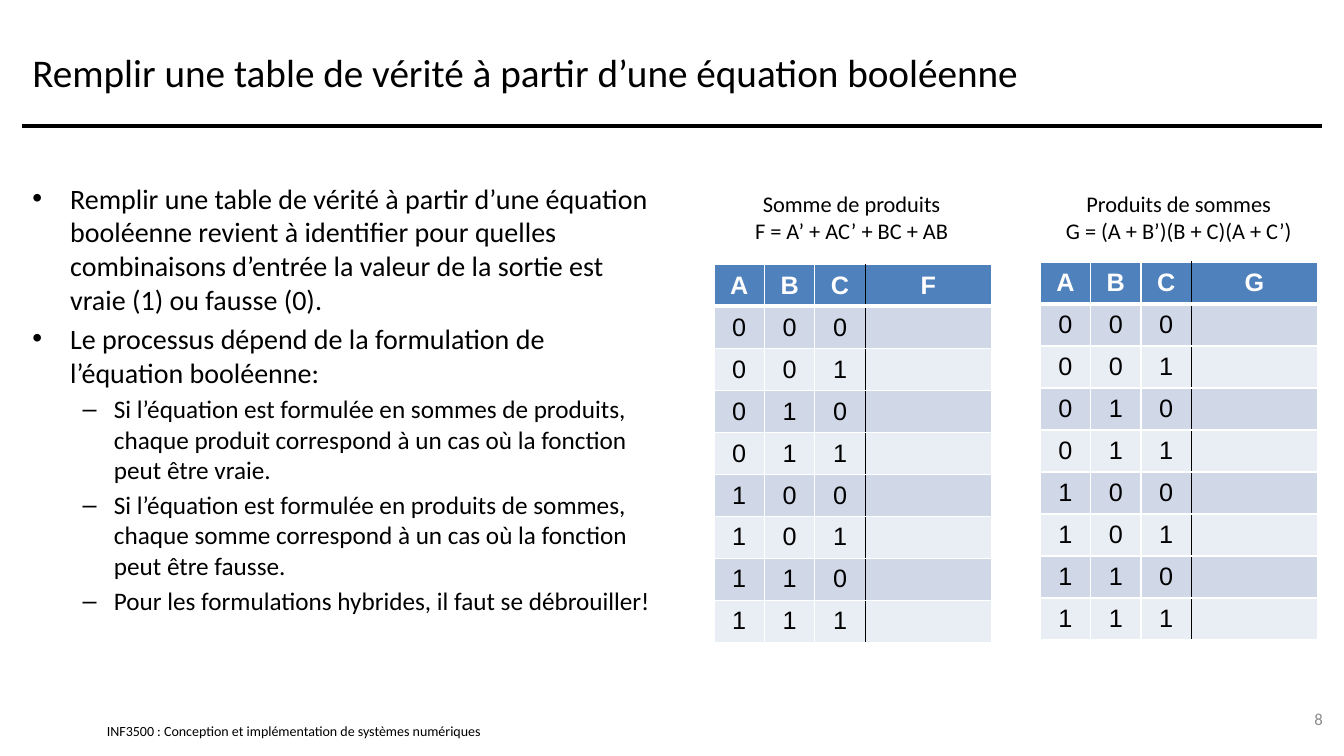
from itertools import product

from lxml import etree
from pptx import Presentation
from pptx import util as u
from pptx.dml.color import RGBColor
from pptx.enum import shapes, text
from pptx.oxml.ns import qn

THEME = {
    "font": "Calibri", "table_font": "Arial",
    "ink": "000000", "paper": "FFFFFF", "muted": "8C8C8C",
    "header": "4F81BD", "bands": ("D0D8E8", "E9EDF4"),
    "title": 28, "body": 20, "detail": 18, "caption": 16, "number": 12, "footer": 10,
}
CENTER, RIGHT = text.PP_ALIGN.CENTER, text.PP_ALIGN.RIGHT
MIDDLE = text.MSO_ANCHOR.MIDDLE

deck = Presentation()
deck.slide_width, deck.slide_height = u.Inches(13.333), u.Inches(7.5)
page = deck.slides.add_slide(deck.slide_layouts[6])

# Grid of 480 columns by 270 rows; one step is the same length both ways
STEP = deck.slide_height / 270


def style(paragraph, size, color="ink", font="font", bold=False):
    for span in paragraph.runs:
        span.font.name, span.font.size, span.font.bold = THEME[font], u.Pt(size), bold
        span.font.color.rgb = RGBColor.from_string(THEME[color])


def add_text(area, lines, size, color="ink", align=None, anchor=None):
    box = page.shapes.add_textbox(*(round(n * STEP) for n in area))
    frame = box.text_frame
    frame.word_wrap = True
    frame.text = "\n".join(lines)
    frame.vertical_anchor = anchor
    for para in frame.paragraphs:
        para.alignment = align
        style(para, size, color)
    return frame


# Footer and slide number
footer = add_text((38.2, 258, 184, 6),
                  ["INF3500 : Conception et implémentation de systèmes numériques"],
                  THEME["footer"], anchor=MIDDLE)
footer.margin_left = footer.margin_right = footer.margin_top = footer.margin_bottom = 0
add_text((452, 249.5, 24, 14.4), ["8"], THEME["number"], "muted", RIGHT, MIDDLE)

# Title and rule
add_text((8, 6, 464, 39), ["Remplir une table de vérité à partir d’une équation booléenne"],
         THEME["title"], anchor=MIDDLE)
rule = page.shapes.add_connector(shapes.MSO_CONNECTOR.STRAIGHT,
                                 *(round(n * STEP) for n in (8, 45, 472, 45)))
rule.line.width = u.Pt(3)
rule.line.color.rgb = RGBColor.from_string(THEME["ink"])
etree.SubElement(rule._element.spPr, qn("a:effectLst"))

# Explanation: (level, wording)
points = [
    (0, "Remplir une table de vérité à partir d’une équation booléenne revient à identifier "
        "pour quelles combinaisons d’entrée la valeur de la sortie est vraie (1) ou fausse (0)."),
    (0, "Le processus dépend de la formulation de l’équation booléenne:"),
    (1, "Si l’équation est formulée en sommes de produits, chaque produit correspond à un cas "
        "où la fonction peut être vraie."),
    (1, "Si l’équation est formulée en produits de sommes, chaque somme correspond à un cas "
        "où la fonction peut être fausse."),
    (1, "Pour les formulations hybrides, il faut se débrouiller!"),
]
levels = [("•", 0.375, 0.375, THEME["body"]), ("–", 0.81, 0.31, THEME["detail"])]
body = add_text((8, 63, 228, 183), [wording for _, wording in points], THEME["body"])
for index, (para, (level, _)) in enumerate(zip(body.paragraphs, points)):
    mark, margin, hang, size = levels[level]
    para.level = level
    props = para._p.get_or_add_pPr()
    props.set("marL", str(u.Inches(margin)))
    props.set("indent", str(-u.Inches(hang)))
    etree.SubElement(props, qn("a:buFont"), typeface="Arial")
    etree.SubElement(props, qn("a:buChar"), char=mark)
    if index:
        para.space_before = u.Pt(size * 0.2)
    style(para, size)

# Truth tables: (left, top, caption left, caption width, output, caption)
tables = [
    (255, 94.4, 255, 98.3, "F", ["Somme de produits", "F = A’ + AC’ + BC + AB"]),
    (371.5, 93.6, 372.2, 97.6, "G", ["Produits de sommes", "G = (A + B’)(B + C)(A + C’)"]),
]
widths, row_height = (18, 18, 18, 45), 15
inputs = [(*bits, "") for bits in product("01", repeat=3)]
for left, top, caption_left, caption_width, output, caption in tables:
    rows = [("A", "B", "C", output), *inputs]
    area = (left, top, sum(widths), row_height * len(rows))
    grid = page.shapes.add_table(len(rows), len(widths),
                                 *(round(n * STEP) for n in area)).table
    for column, width in zip(grid.columns, widths):
        column.width = round(width * STEP)
    for r, row in enumerate(rows):
        grid.rows[r].height = round(row_height * STEP)
        for c, value in enumerate(row):
            cell = grid.cell(r, c)
            cell.text = value
            cell.vertical_anchor = MIDDLE
            cell.text_frame.paragraphs[0].alignment = CENTER
            style(cell.text_frame.paragraphs[0], THEME["detail"],
                  "ink" if r else "paper", "table_font", bold=r == 0)
            cell.fill.solid()
            cell.fill.fore_color.rgb = RGBColor.from_string(
                THEME["bands"][(r - 1) % 2] if r else THEME["header"])

            # White borders, thick under the header, black before the output
            borders = [("L", c == 3, 1), ("R", c == 2, 1),
                       ("T", False, 3 if r == 1 else 1), ("B", False, 1 if r else 3)]
            cell_props = cell._tc.get_or_add_tcPr()
            for place, (side, dark, points_wide) in enumerate(borders):
                edge = etree.Element(qn(f"a:ln{side}"), w=str(u.Pt(points_wide)))
                paint = etree.SubElement(edge, qn("a:solidFill"))
                etree.SubElement(paint, qn("a:srgbClr"), val=THEME["ink" if dark else "paper"])
                cell_props.insert(place, edge)

    label = add_text((caption_left, 66, caption_width, 23), caption,
                     THEME["caption"], align=CENTER)
    label.auto_size = text.MSO_AUTO_SIZE.SHAPE_TO_FIT_TEXT

deck.save("out.pptx")
